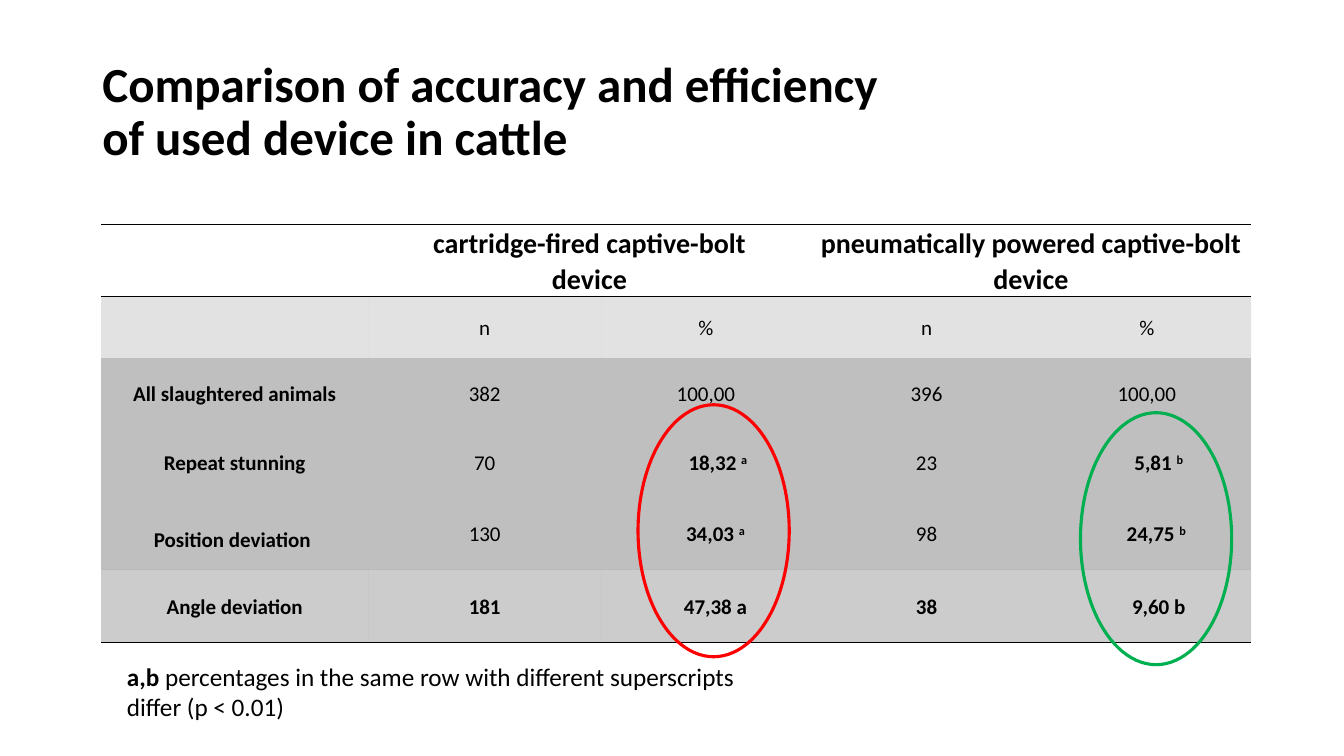
from dataclasses import dataclass
from typing import Any, Optional

from lxml.etree import SubElement
from pptx import Presentation
from pptx.dml.color import RGBColor
from pptx.enum.shapes import MSO_SHAPE
from pptx.enum.text import MSO_ANCHOR, MSO_AUTO_SIZE, PP_ALIGN
from pptx.oxml import parse_xml
from pptx.oxml.ns import nsdecls, qn
from pptx.util import Cm, Pt

BLACK = RGBColor(0x00, 0x00, 0x00)
WARM_GREY = RGBColor(0x76, 0x71, 0x71)
GREY = RGBColor(0xBF, 0xBF, 0xBF)
RED = RGBColor(0xFF, 0x00, 0x00)
GREEN = RGBColor(0x00, 0xB0, 0x50)

FONT = "Calibri"
NO_STYLE = "{2D5ABB26-0587-4C30-8999-92F81FD0307C}"
COLUMN_WIDTHS = (6.73, 5.87, 5.28, 5.84, 5.26)
CELL_FORMAT = {
    "vertical_anchor": MSO_ANCHOR.MIDDLE,
    "margin_left": Cm(0.13),
    "margin_right": Cm(0.13),
    "margin_top": 0,
    "margin_bottom": 0,
}


@dataclass(frozen=True)
class Entry:
    text: str
    bold: bool = False
    mark: str = ""
    indent: float = 0
    spacing: float = 1.07
    size: float = 15
    span: int = 1


@dataclass(frozen=True)
class Row:
    height: float
    entries: tuple[Entry, ...]
    fill: Optional[RGBColor] = None
    opacity: int = 100
    edges: tuple[str, ...] = ()


@dataclass(frozen=True)
class Ring:
    left: float
    top: float
    color: RGBColor


def heading(text: str, span: int = 2) -> Entry:
    return Entry(text, bold=True, size=20, span=span)


def share(text: str, mark: str = "", indent: float = 0.48) -> Entry:
    return Entry(text, bold=True, mark=mark, indent=indent)


ROWS = (
    Row(1.57, (heading("", 1), heading("cartridge-fired captive-bolt\ndevice"),
               heading("pneumatically powered captive-bolt device")),
        edges=("lnT", "lnB")),
    Row(1.57, (Entry(""), Entry("n"), Entry("%"), Entry("n"), Entry("%")),
        WARM_GREY, 20),
    Row(1.75, (Entry("All slaughtered animals", True), Entry("382"),
               Entry("100,00"), Entry("396"), Entry("100,00")), GREY),
    Row(1.75, (Entry("Repeat stunning", True), Entry("70"),
               share("18,32 ", "a", 0.6), Entry("23"),
               share("5,81 ", "b", 0.6)), GREY),
    Row(1.83, (Entry("Position deviation ", True, spacing=1.5), Entry("130"),
               share("34,03 ", "a"), Entry("98"), share("24,75 ", "b")), GREY),
    Row(1.83, (Entry("Angle deviation", True), Entry("181", True),
               share("47,38 a"), Entry("38", True),
               share("9,60 b", indent=0.6)), BLACK, 20, ("lnB",)),
)

RINGS = (Ring(16.08, 10.2, RED), Ring(27.23, 10.4, GREEN))


def apply(target: Any, values: dict[str, Any]) -> None:
    for name, value in values.items():
        setattr(target, name, value)


def add_run(p: Any, text: str, size: float, bold: bool, raised: bool = False) -> None:
    r = p.add_run()
    r.text = text
    apply(r.font, {"name": FONT, "size": Pt(size), "bold": bold})
    r.font.color.rgb = BLACK
    if raised:
        r._r.get_or_add_rPr().set("baseline", "30000")


def add_text_frame(s: Any, left: float, top: float, width: float, height: float,
                   values: dict[str, Any]) -> Any:
    tf = s.shapes.add_textbox(Cm(left), Cm(top), Cm(width), Cm(height)).text_frame
    apply(tf, {"word_wrap": True, **values})
    return tf


def paint_cell(cell: Any, row: Row) -> None:
    if row.fill is None:
        cell.fill.background()
    else:
        cell.fill.solid()
        cell.fill.fore_color.rgb = row.fill
    props = cell._tc.get_or_add_tcPr()
    if row.opacity < 100:
        color = props.find(qn("a:solidFill")).find(qn("a:srgbClr"))
        SubElement(color, qn("a:alpha"), val=str(row.opacity * 1000))
    for position, edge in enumerate(row.edges):
        props.insert(position, parse_xml(
            f'<a:{edge} {nsdecls("a")} w="12700"><a:solidFill>'
            f'<a:srgbClr val="{BLACK}"/></a:solidFill></a:{edge}>'))


def write_cell(cell: Any, entry: Entry) -> None:
    apply(cell, CELL_FORMAT)
    cell.margin_left += Cm(entry.indent)
    if not entry.text:
        return
    tf = cell.text_frame
    for number, line in enumerate(entry.text.split("\n")):
        p = tf.add_paragraph() if number else tf.paragraphs[0]
        apply(p, {"alignment": PP_ALIGN.CENTER, "line_spacing": entry.spacing})
        add_run(p, line, entry.size, entry.bold)
    if entry.mark:
        add_run(p, entry.mark, entry.size, entry.bold, raised=True)


def add_results_table(s: Any) -> None:
    frame = s.shapes.add_table(len(ROWS), len(COLUMN_WIDTHS), Cm(2.55), Cm(5.65),
                               Cm(sum(COLUMN_WIDTHS)),
                               Cm(sum(row.height for row in ROWS)))
    table = frame.table
    apply(table, {"first_row": False, "horz_banding": False})
    table._tbl.tblPr.find(qn("a:tableStyleId")).text = NO_STYLE
    for column, width in zip(table.columns, COLUMN_WIDTHS):
        column.width = Cm(width)
    for i, row in enumerate(ROWS):
        table.rows[i].height = Cm(row.height)
        for j in range(len(COLUMN_WIDTHS)):
            paint_cell(table.cell(i, j), row)
        j = 0
        for entry in row.entries:
            cell = table.cell(i, j)
            if entry.span > 1:
                cell.merge(table.cell(i, j + entry.span - 1))
            write_cell(cell, entry)
            j += entry.span


def add_ring(s: Any, ring: Ring) -> None:
    sp = s.shapes.add_shape(MSO_SHAPE.OVAL, Cm(ring.left), Cm(ring.top),
                            Cm(3.81), Cm(6.35))
    sp.shadow.inherit = False
    sp.fill.background()
    sp.line.color.rgb = ring.color
    sp.line.width = Pt(2.25)


def main() -> None:
    prs = Presentation()
    apply(prs, {"slide_width": Cm(33.87), "slide_height": Cm(19.05)})
    s = prs.slides.add_slide(prs.slide_layouts[6])

    title = add_text_frame(s, 2.33, 1.01, 29.21, 3.68,
                           {"vertical_anchor": MSO_ANCHOR.MIDDLE})
    p = title.paragraphs[0]
    p.line_spacing = 0.9
    add_run(p, "Comparison of accuracy and efficiency", 35, True)
    p.add_line_break()
    add_run(p, "of used device in cattle", 35, True)

    add_results_table(s)
    for ring in RINGS:
        add_ring(s, ring)

    note = add_text_frame(s, 2.95, 16.54, 16.93, 1.8,
                          {"auto_size": MSO_AUTO_SIZE.SHAPE_TO_FIT_TEXT})
    p = note.paragraphs[0]
    add_run(p, "a,b ", 18, True)
    add_run(p, "percentages in the same row with different superscripts "
               "differ (p ˂ 0.01)", 18, False)

    prs.save("out.pptx")


if __name__ == "__main__":
    main()
